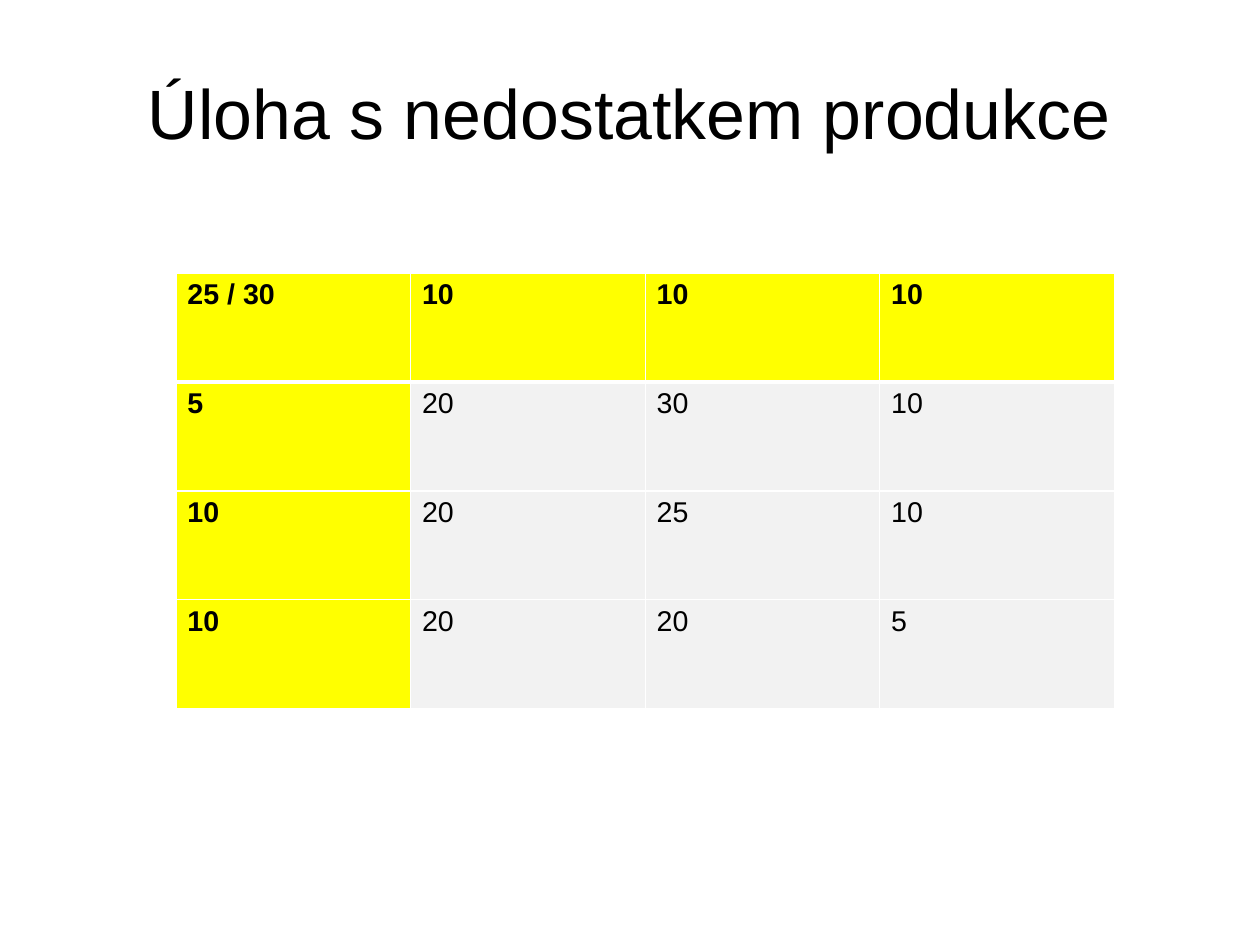
import pptx
import pptx.util
import pptx.dml.color
import pptx.enum.text
import pptx.oxml.ns
import lxml.etree

COLORS = {"text": "000000", "header": "FFFF00", "body": "F2F2F2", "border": "FFFFFF"}
COSTS = [
    ["25 / 30", "10", "10", "10"],
    ["5", "20", "30", "10"],
    ["10", "20", "25", "10"],
    ["10", "20", "20", "5"],
]
CM_PER_INCH = 2.54


def write(frame, text, size=18, bold=False, align=pptx.enum.text.PP_ALIGN.LEFT, spacing=1.0):
    paragraph = frame.paragraphs[0]
    paragraph.alignment = align
    paragraph.line_spacing = spacing
    run = paragraph.add_run()
    run.text = text
    run.font.name = "Arial"
    run.font.size = pptx.util.Pt(size)
    run.font.bold = bold
    run.font.color.rgb = pptx.dml.color.RGBColor.from_string(COLORS["text"])


def add_border(cell, side, width):
    qn = pptx.oxml.ns.qn
    properties = cell._tc.get_or_add_tcPr()
    line = lxml.etree.SubElement(properties, qn(f"a:ln{side}"), w=str(pptx.util.Pt(width)))
    fill = lxml.etree.SubElement(line, qn("a:solidFill"))
    lxml.etree.SubElement(fill, qn("a:srgbClr"), val=COLORS["border"])


deck = pptx.Presentation()
deck.slide_width = pptx.util.Inches(28 / CM_PER_INCH)
deck.slide_height = pptx.util.Inches(21 / CM_PER_INCH)
slide = deck.slides.add_slide(deck.slide_layouts[6])

heading = slide.shapes.add_textbox(
    pptx.util.Inches(0.55), pptx.util.Inches(0.33),
    pptx.util.Inches(9.92), pptx.util.Inches(1.38)).text_frame
heading.word_wrap = True
heading.vertical_anchor = pptx.enum.text.MSO_ANCHOR.MIDDLE
heading.margin_left = heading.margin_right = heading.margin_top = heading.margin_bottom = 0
write(heading, "Úloha s nedostatkem produkce", size=44,
      align=pptx.enum.text.PP_ALIGN.CENTER, spacing=0.9)

cost_table = slide.shapes.add_table(
    len(COSTS), len(COSTS[0]), pptx.util.Inches(1.54), pptx.util.Inches(2.39),
    pptx.util.Inches(8.21), pptx.util.Inches(3.81)).table
cost_table.first_col = True
cost_table.horz_banding = False

for row, values in enumerate(COSTS):
    for column, value in enumerate(values):
        cell = cost_table.cell(row, column)
        is_header = row == 0 or column == 0
        write(cell.text_frame, value, bold=is_header)
        top_width = 3 if row == 1 else 1
        bottom_width = 3 if row == 0 else 1
        for side, width in (("L", 1), ("R", 1), ("T", top_width), ("B", bottom_width)):
            add_border(cell, side, width)
        cell.fill.solid()
        cell.fill.fore_color.rgb = pptx.dml.color.RGBColor.from_string(
            COLORS["header" if is_header else "body"])

deck.save("out.pptx")
